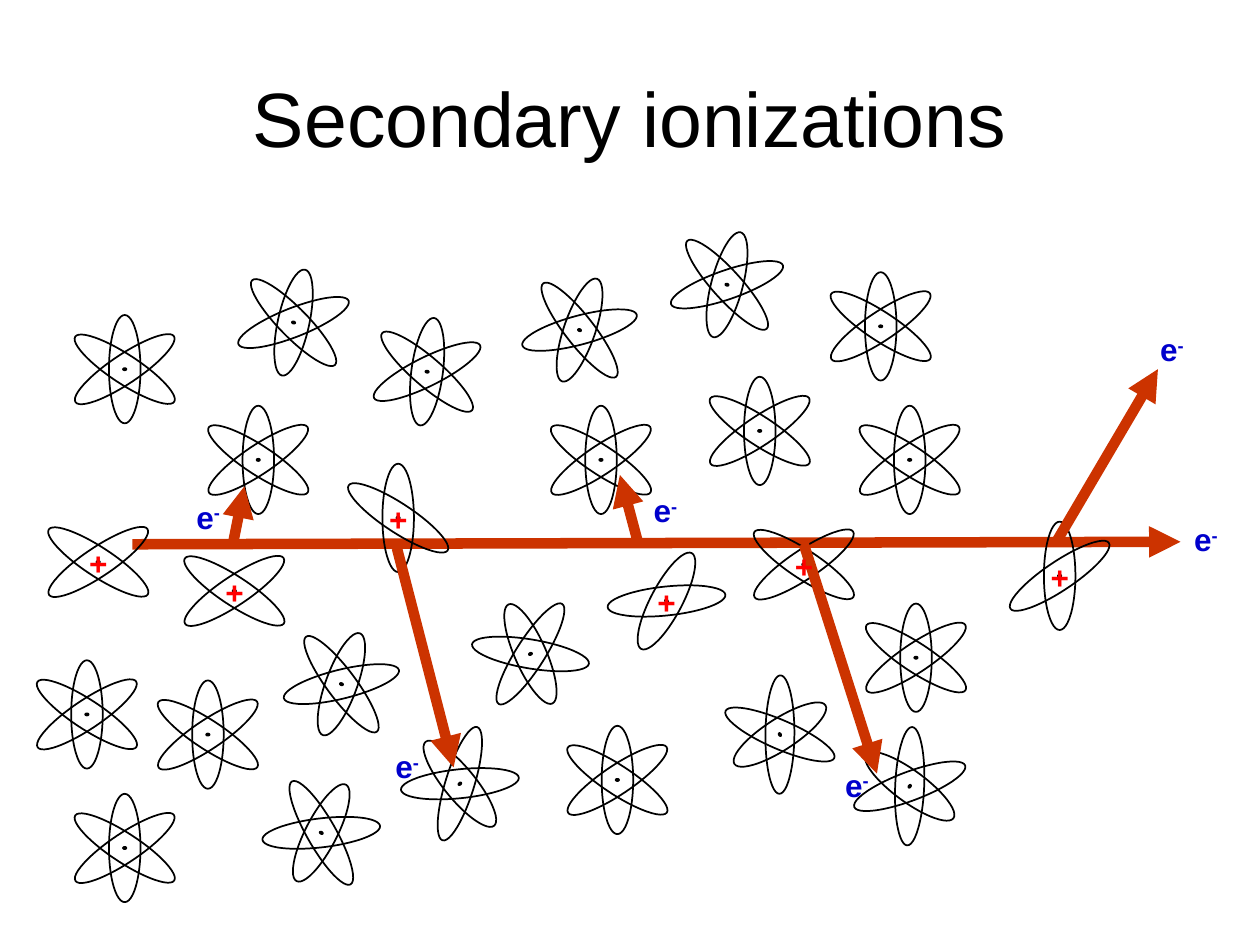
from lxml.etree import SubElement
from pptx import Presentation
from pptx.dml.color import RGBColor
from pptx.enum.shapes import MSO_CONNECTOR, MSO_SHAPE
from pptx.enum.text import MSO_ANCHOR, PP_ALIGN
from pptx.oxml.ns import qn
from pptx.util import Inches, Pt

BLACK = RGBColor(0x00, 0x00, 0x00)
BLUE = RGBColor(0x00, 0x00, 0xCC)
RED = RGBColor(0xFF, 0x00, 0x00)
RUST = RGBColor(0xCC, 0x33, 0x00)

TITLE = "Secondary ionizations"

# Orbit: width, height, rotation in an upright atom
ORBITS = {
    "upright": (0.86, 0.25, 270),
    "falling": (0.94, 0.23, 213.3),
    "rising": (0.94, 0.23, 326.2),
}
NUCLEUS = (0.02, 0.03, 270)

# Whole atoms: centre x, centre y, turn in degrees
ATOMS = [
    (4.77, 3.65, 0), (2.71, 5.43, 20), (4.21, 5.19, -23.8),
    (7.22, 3.65, 0), (7.27, 5.22, 0), (6.03, 3.42, 0),
    (2.05, 3.65, 0), (6.19, 5.83, 57.2), (3.65, 6.22, -39.2),
    (4.9, 6.19, 0), (3.39, 2.95, 7.4), (2.55, 6.61, 27.1),
    (1.65, 5.83, 0), (6.99, 2.59, 0), (5.77, 2.26, 14.7),
    (4.6, 2.62, 18.8), (2.33, 2.56, 12.3), (7.22, 6.24, -53.8),
    (0.69, 5.67, 0), (0.99, 6.73, 0), (0.99, 2.93, 0),
]

# Ions have lost one orbit: centre x, centre y, turn, lost orbit
IONS = [
    (0.78, 4.46, 0, "upright"),
    (1.86, 4.69, 0, "upright"),
    (3.16, 4.11, 0, "rising"),
    (8.41, 4.57, 0, "falling"),
    (6.38, 4.48, 0, "upright"),
    (5.29, 4.77, 27.8, "falling"),
]

# Electron tracks: start, end, corner of the electron label
PRIMARY = ((1.05, 4.32), (9.37, 4.3), (9.38, 4.08))
SECONDARIES = [
    ((8.39, 4.29), (9.19, 2.93), (9.11, 2.57)),
    ((3.15, 4.35), (3.6, 6.09), (3.04, 5.88)),
    ((1.85, 4.31), (1.94, 3.86), (1.46, 3.9)),
    ((6.38, 4.32), (6.96, 6.14), (6.61, 6.03)),
    ((5.07, 4.33), (4.92, 3.77), (5.09, 3.85)),
]
LABEL_SIZE = (0.44, 0.4)
CHARGE_OFFSET = (-0.17, -0.19)


def set_font(font, **values):
    color = values.pop("color")
    for key, value in {"name": "Arial", **values}.items():
        setattr(font, key, value)
    font.color.rgb = color


def add_ellipse(slide, x, y, form, turn, filled=False):
    width, height, angle = form
    ellipse = slide.shapes.add_shape(
        MSO_SHAPE.OVAL, Inches(x - width / 2), Inches(y - height / 2),
        Inches(width), Inches(height))
    ellipse.rotation = (angle + turn) % 360
    ellipse.shadow.inherit = False
    ellipse.line.color.rgb = BLACK
    ellipse.line.width = Pt(0.75 if filled else 1)
    if filled:
        ellipse.fill.solid()
        ellipse.fill.fore_color.rgb = BLACK
    else:
        ellipse.fill.background()


def add_atom(slide, x, y, turn, lost=None):
    add_ellipse(slide, x, y, NUCLEUS, turn, filled=True)
    for orbit, form in ORBITS.items():
        if orbit != lost:
            add_ellipse(slide, x, y, form, turn)


def add_track(slide, start, end):
    track = slide.shapes.add_connector(
        MSO_CONNECTOR.STRAIGHT, *(Inches(v) for v in start + end))
    track.line.color.rgb = RUST
    track.line.width = Pt(6)
    SubElement(track.line._get_or_add_ln(), qn("a:tailEnd"), type="triangle")
    SubElement(track._element.spPr, qn("a:effectLst"))


def add_label(slide, corner, symbol, color, superscript=""):
    label = slide.shapes.add_textbox(*(Inches(v) for v in corner + LABEL_SIZE))
    label.text_frame.word_wrap = True
    paragraph = label.text_frame.paragraphs[0]
    for text in filter(None, (symbol, superscript)):
        run = paragraph.add_run()
        run.text = text
        set_font(run.font, size=Pt(18), bold=True, color=color)
        if text == superscript:
            run._r.get_or_add_rPr().set("baseline", "30000")


def main():
    deck = Presentation()
    deck.slide_width, deck.slide_height = Inches(10), Inches(7.5)
    slide = deck.slides.add_slide(deck.slide_layouts[5])

    # Title
    title = slide.shapes.title
    title.left, title.top = Inches(0.5), Inches(0.3)
    title.width, title.height = Inches(9), Inches(1.25)
    title.text_frame.text = TITLE
    title.text_frame.vertical_anchor = MSO_ANCHOR.MIDDLE
    heading = title.text_frame.paragraphs[0]
    heading.alignment = PP_ALIGN.CENTER
    set_font(heading.runs[0].font, size=Pt(44), color=BLACK)

    # Primary electron, then the gas it crosses
    add_track(slide, *PRIMARY[:2])
    for atom in IONS + ATOMS:
        add_atom(slide, *atom)

    # Secondary electrons
    for start, end, _ in SECONDARIES:
        add_track(slide, start, end)

    # Charge labels
    for _, _, corner in [PRIMARY] + SECONDARIES:
        add_label(slide, corner, "e", BLUE, "-")
    for x, y, _, _ in IONS:
        add_label(slide, (x + CHARGE_OFFSET[0], y + CHARGE_OFFSET[1]), "+", RED)

    deck.save("out.pptx")


if __name__ == "__main__":
    main()
